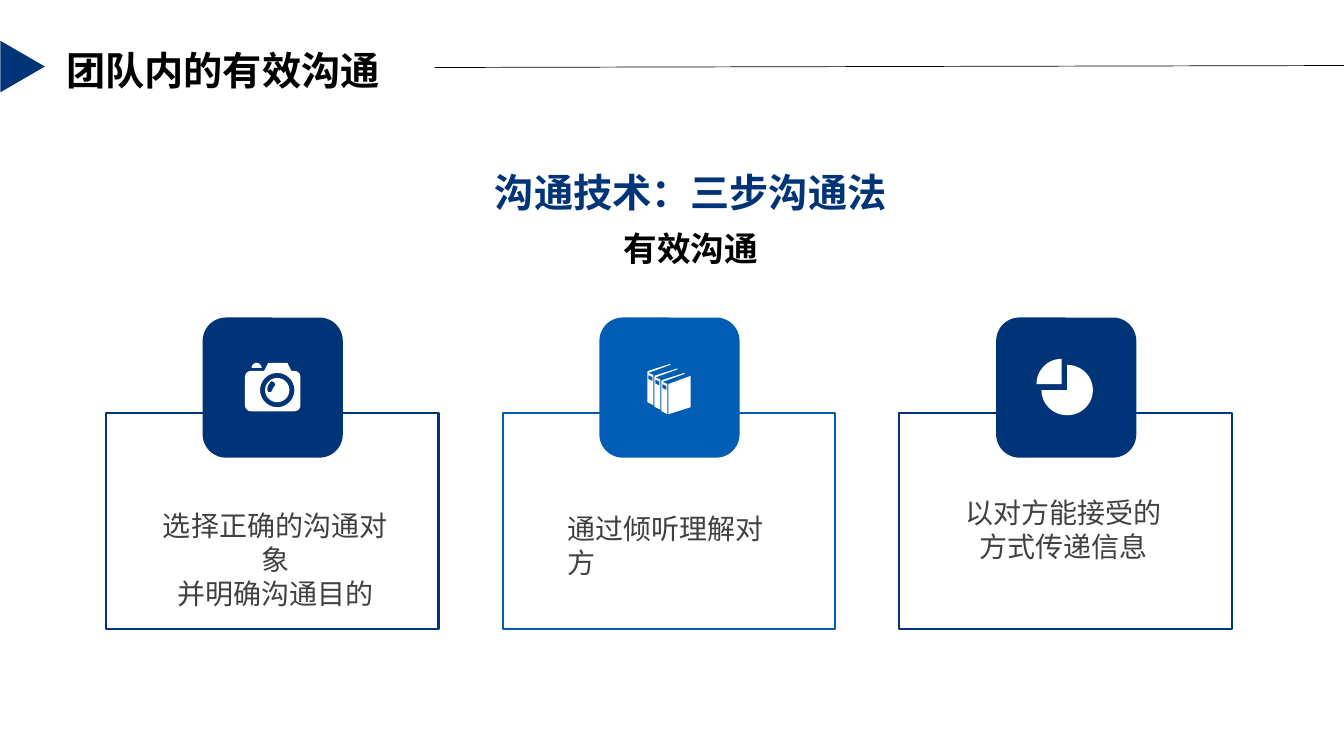
from math import cos, sin, radians
from pptx import Presentation
from pptx.dml.color import RGBColor
from pptx.enum.shapes import MSO_CONNECTOR, MSO_SHAPE
from pptx.enum.text import MSO_ANCHOR, PP_ALIGN as Align
from pptx.oxml.ns import qn
from pptx.util import Inches, Pt
from lxml.etree import SubElement

COLORS = {"navy": "003479", "blue": "015DB4", "white": "FFFFFF",
          "black": "000000", "gray": "404040"}
HEAD_FONT, BODY_FONT = "Noto Sans CJK JP", "Noto Sans CJK SC"

HEADER = {"size": 28, "font": HEAD_FONT, "color": "black", "bold": True, "align": Align.JUSTIFY}
TITLE = {"size": 28, "font": BODY_FONT, "color": "navy", "bold": True, "align": Align.LEFT}
SUBTITLE = {"size": 24, "font": BODY_FONT, "color": "black", "bold": True, "align": Align.CENTER}
BODY = {"size": 20, "font": BODY_FONT, "color": "gray", "bold": False, "align": Align.CENTER}

TEXTS = [
    (["团队内的有效沟通"], (0.56, 0.38, 3.75, 0.57), HEADER),
    (["沟通技术：三步沟通法"], (4.81, 1.59, 4.15, 0.57), TITLE),
    (["有效沟通"], (5.46, 2.19, 2.78, 0.5), SUBTITLE),
    (["选择正确的沟通对象", "并明确沟通目的"], (1.43, 4.98, 2.6, 1.1), BODY),
    (["通过倾听理解对方"], (5.53, 5.01, 2.3, 0.77), {**BODY, "align": Align.LEFT}),
    (["以对方能接受的方式传递信息"], (9.47, 4.85, 2.16, 0.77), BODY),
]

CARD_COLORS = ["navy", "blue", "navy"]
CARD_LEFT, CARD_PITCH, CARD_TOP = 1.05, 3.935, 4.1
CARD_WIDTH, CARD_HEIGHT = 3.3, 2.14
TILE_OFFSET, TILE_TOP, TILE_SIZE = 0.96, 3.15, 1.39

BOOK_COVER = [(6.65, 3.61), (6.43, 3.68), (6.42, 3.69), (6.42, 3.99), (6.48, 4.02),
              (6.48, 3.72), (6.43, 3.7), (6.65, 3.62)]
BOOK_LABEL = [(6.47, 3.74), (6.47, 3.78), (6.43, 3.76), (6.43, 3.72)]
BOOK_FRONT = [(6.63, 3.81), (6.63, 4.11), (6.85, 4.04), (6.85, 3.73)]
BOOK_COUNT, BOOK_STEP = 3, (0.07, 0.045)

CAMERA_HUMP = [(2.89, 3.68), (2.85, 3.6), (2.66, 3.6), (2.62, 3.68)]
CAMERA_CORNERS = [(2.49, 3.74, 180), (2.92, 3.74, 270), (2.92, 4.02, 0), (2.49, 4.02, 90)]
CAMERA_GLINT = [(2.72, 3.79), (2.69, 3.78), (2.66, 3.82), (2.65, 3.86), (2.66, 3.89),
                (2.69, 3.89), (2.71, 3.85), (2.73, 3.82)]
LENS = (2.75, 3.87)


def arc(x, y, radius, start, end, steps=12):
    angles = [radians(start + (end - start) * step / steps) for step in range(steps + 1)]
    return [(x + radius * cos(angle), y + radius * sin(angle)) for angle in angles]


def camera_contours():
    corners = [arc(x, y, 0.06, start, start + 90) for x, y, start in CAMERA_CORNERS]
    body = corners[0] + CAMERA_HUMP[::-1] + sum(corners[1:], [])
    rings = [arc(*LENS, radius, 0, 360, 48) for radius in (0.17, 0.12)]
    button = arc(2.545, 3.65, 0.05, 180, 360)
    return [body, *rings, CAMERA_GLINT, button]


def book_contours():
    contours = [BOOK_FRONT]
    for index in range(BOOK_COUNT):
        shift_x, shift_y = (step * index for step in BOOK_STEP)
        for contour in (BOOK_COVER, BOOK_LABEL):
            contours.append([(x + shift_x, y + shift_y) for x, y in contour])
    return contours


def pie_slice_contours():
    return [[(10.53, 3.81)] + arc(10.53, 3.81, 0.25, 180, 270)]


ICONS = [camera_contours, book_contours, pie_slice_contours]


def color(name):
    return RGBColor.from_string(COLORS[name])


def paint(shape, fill=None, line=None):
    shape.shadow.inherit = False
    if fill:
        shape.fill.solid()
        shape.fill.fore_color.rgb = color(fill)
    else:
        shape.fill.background()
    if line:
        shape.line.color.rgb = color(line)
        shape.line.width = Pt(1.5)
    else:
        shape.line.fill.background()


def add_preset(shapes, kind, area, **look):
    shape = shapes.add_shape(kind, *map(Inches, area))
    paint(shape, **look)
    return shape


def add_icon(shapes, contours):
    outlines = [[(Inches(x), Inches(y)) for x, y in contour] for contour in contours]
    builder = shapes.build_freeform(*outlines[0][0])
    builder.add_line_segments(outlines[0][1:])
    for outline in outlines[1:]:
        builder.move_to(*outline[0])
        builder.add_line_segments(outline[1:])
    paint(builder.convert_to_shape(), fill="white")


def add_text(page, lines, area, style):
    left, top, width, height = area
    drop = 0.001 * style["size"]
    box = page.shapes.add_textbox(*map(Inches, (left, top + drop, width, height)))
    frame = box.text_frame
    frame.word_wrap = True
    frame.vertical_anchor = MSO_ANCHOR.TOP
    for index, line in enumerate(lines):
        para = frame.add_paragraph() if index else frame.paragraphs[0]
        para.alignment = style["align"]
        para.line_spacing = Pt(1.2 * style["size"])
        span = para.add_run()
        span.text = line
        formats = {"size": Pt(style["size"]), "bold": style["bold"], "name": style["font"]}
        for name, value in formats.items():
            setattr(span.font, name, value)
        span.font.color.rgb = color(style["color"])
        SubElement(span.font._element, qn("a:ea"), typeface=style["font"])


def add_card(page, index, tone):
    shapes = page.shapes.add_group_shape().shapes
    left = CARD_LEFT + CARD_PITCH * index
    add_preset(shapes, MSO_SHAPE.RECTANGLE,
               (left, CARD_TOP, CARD_WIDTH, CARD_HEIGHT), line=tone)
    add_preset(shapes, MSO_SHAPE.ROUNDED_RECTANGLE,
               (left + TILE_OFFSET, TILE_TOP, TILE_SIZE, TILE_SIZE), fill=tone)
    add_icon(shapes, ICONS[index]())
    return shapes


def main():
    deck = Presentation()
    deck.slide_width, deck.slide_height = Inches(13.33), Inches(7.5)
    page = deck.slides.add_slide(deck.slide_layouts[6])

    marker = add_preset(page.shapes, MSO_SHAPE.ISOSCELES_TRIANGLE,
                        (-0.03, 0.44, 0.51, 0.44), fill="navy")
    marker.rotation = 90
    rule = page.shapes.add_connector(MSO_CONNECTOR.STRAIGHT,
                                     *map(Inches, (4.31, 0.67, 13.33, 0.65)))
    rule.line.color.rgb = color("black")
    rule.line.width = Pt(0.5)
    SubElement(rule._element.spPr, qn("a:effectLst"))

    cards = [add_card(page, index, tone) for index, tone in enumerate(CARD_COLORS)]
    pie = add_preset(cards[-1], MSO_SHAPE.PIE, (10.33, 3.62, 0.51, 0.5), fill="white")
    pie.adjustments[0], pie.adjustments[1] = 0, 16200000 / 100000
    pie._element.spPr.find(qn("a:xfrm")).set("flipH", "1")
    for adjust, angle in zip(pie._element.spPr.iter(qn("a:gd")), (0, 16200000)):
        adjust.set("fmla", f"val {angle}")

    for lines, area, style in TEXTS:
        add_text(page, lines, area, style)
    deck.save("out.pptx")


if __name__ == "__main__":
    main()
